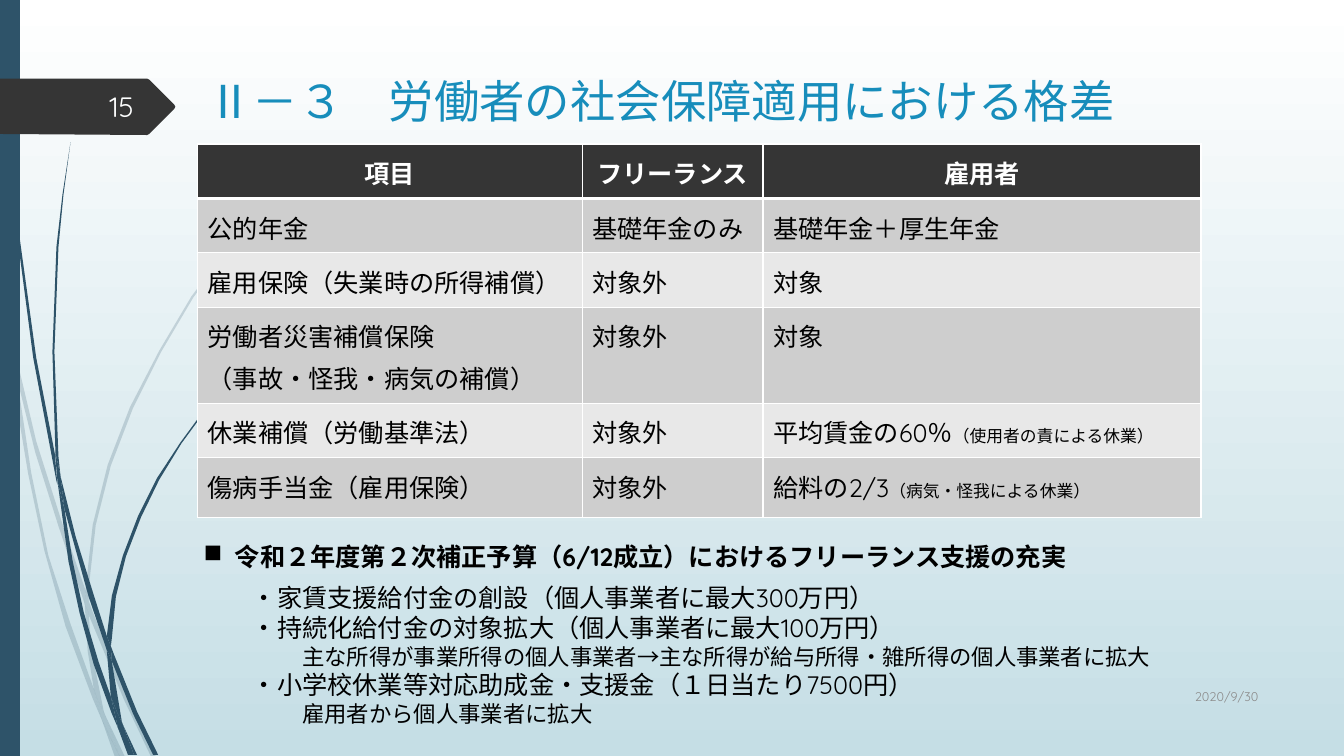
"""Build a slide comparing social security for freelancers and employees."""
from lxml import etree
from pptx import Presentation
from pptx.dml.color import RGBColor
from pptx.enum.text import MSO_ANCHOR, PP_ALIGN
from pptx.oxml.ns import qn
from pptx.util import Cm, Pt

LEFT, CENTER, RIGHT = PP_ALIGN.LEFT, PP_ALIGN.CENTER, PP_ALIGN.RIGHT
TOP, MIDDLE = MSO_ANCHOR.TOP, MSO_ANCHOR.MIDDLE
FONT = "Quicksand"
GRID = Cm(0.0254)
COLORS = {
    "white": "FFFFFF", "sky": "C5DEE5", "navy": "2E5369", "dark": "353535",
    "number": "FEFFFF", "title": "178DBB", "text": "000000", "date": "8C8C8C",
    "odd": "CECECE", "even": "E8E8E8",
}

PALE_BLADES = [
    [(11, 350), (9, 322), (0, 282), (0, 299), (10, 344)],
    [(58, 522), (84, 599), (85, 586), (62, 520), (36, 438), (14, 345), (17, 376), (35, 449)],
    [(92, 607), (88, 596), (88, 610), (123, 694), (150, 751), (155, 751), (127, 692)],
    [(119, 751), (124, 751), (105, 711)],
    [(93, 683), (70, 619), (48, 551), (31, 469), (17, 376), (11, 350), (18, 410), (28, 470),
     (44, 546), (65, 621), (92, 693), (101, 714), (99, 707)],
    [(84, 599), (87, 646), (93, 683), (96, 692), (105, 711), (103, 706), (91, 646), (88, 610),
     (88, 608)],
    [(88, 584), (95, 521), (110, 462), (132, 405), (160, 349), (192, 295), (229, 245),
     (268, 198), (290, 175), (312, 154), (312, 153), (289, 175), (268, 197), (228, 244),
     (190, 294), (158, 348), (129, 404), (107, 461), (92, 521), (85, 584), (85, 586), (88, 596)],
    [(101, 714), (114, 751), (119, 751)],
    [(88, 608), (88, 610), (88, 596), (85, 586), (84, 599)],
    [(96, 692), (93, 683), (99, 707), (101, 714), (119, 751), (105, 711)],
]
DARK_BLADES = [
    [(7, 110), (17, 233), (33, 355), (56, 477), (57, 481), (55, 457), (55, 453), (36, 355),
     (19, 232), (8, 109), (5, 48), (4, 0), (3, 0), (4, 48)],
    [(88, 592), (106, 645), (106, 631), (93, 590), (75, 532), (60, 472), (64, 505)],
    [(113, 649), (110, 641), (111, 656), (132, 708), (152, 749), (157, 749), (136, 706)],
    [(110, 691), (98, 657), (83, 607), (72, 556), (64, 505), (57, 477), (68, 557), (79, 608),
     (93, 659), (111, 708), (117, 722), (116, 717)],
    [(60, 472), (58, 453), (54, 349), (58, 245), (63, 193), (70, 141), (62, 193), (56, 245),
     (52, 349), (55, 449)],
    [(133, 749), (136, 749), (122, 719)],
    [(57, 477), (64, 505), (60, 472), (55, 449), (55, 453)],
    [(111, 633), (115, 592), (125, 552), (140, 513), (158, 476), (180, 440), (205, 406),
     (231, 374), (245, 359), (261, 344), (260, 344), (245, 358), (231, 373), (204, 405),
     (179, 439), (156, 474), (137, 512), (122, 551), (111, 591), (106, 631), (110, 641)],
    [(117, 722), (127, 749), (131, 749)],
    [(106, 645), (110, 691), (116, 706), (122, 719), (121, 716), (111, 656), (109, 651)],
    [(106, 645), (109, 651), (111, 656), (110, 641), (106, 631)],
    [(116, 706), (110, 691), (116, 717), (117, 722), (130, 749), (133, 749), (122, 719)],
]
PAGE_TAG = [(0, 78), (146, 78), (148, 79), (173, 104), (174, 106), (173, 108), (148, 133),
            (146, 134), (0, 133)]

TABLE_ROWS = [
    ["項目", "フリーランス", "雇用者"],
    ["公的年金", "基礎年金のみ", "基礎年金＋厚生年金"],
    ["雇用保険（失業時の所得補償）", "対象外", "対象"],
    ["労働者災害補償保険\n（事故・怪我・病気の補償）", "対象外", "対象"],
    ["休業補償（労働基準法）", "対象外", "平均賃金の60％|（使用者の責による休業）"],
    ["傷病手当金（雇用保険）", "対象外", "給料の2/3|（病気・怪我による休業）"],
]
COLUMN_WIDTHS = [9.69, 4.56, 11.04]
ROW_HEIGHTS = [1.37, 1.37, 1.37, 2.42, 1.37, 1.5]

SUPPORT_ITEMS = [
    (0, "・家賃支援給付金の創設（個人事業者に最大300万円）"),
    (0, "・持続化給付金の対象拡大（個人事業者に最大100万円）"),
    (1, "主な所得が事業所得の個人事業者→主な所得が給与所得・雑所得の個人事業者に拡大"),
    (0, "・小学校休業等対応助成金・支援金（１日当たり7500円）"),
    (1, "雇用者から個人事業者に拡大"),
]
LEVEL_SIZES = [18, 16]

TEXT_BOXES = [
    ((1.47, 2.18, 2.16, 1.02), MIDDLE, RIGHT, 20, "number", False, [(0, "15")]),
    ((4.98, 1.73, 26.9, 1.9), TOP, LEFT, 32.4, "title", False,
     [(0, "Ⅱ－３　労働者の社会保障適用における格差")]),
    ((4.88, 13.51, 25.1, 1.02), TOP, LEFT, 18, "text", True,
     [(0, "令和２年度第２次補正予算（6/12成立）におけるフリーランス支援の充実")]),
    ((6.1, 14.55, 24.16, 4.01), TOP, LEFT, None, "text", False, SUPPORT_ITEMS),
    ((28.78, 17.02, 3.18, 1.04), MIDDLE, RIGHT, 9, "date", False, [(0, "2020/9/30")]),
]


def add_outline(shapes, points, color, alpha=None):
    """Draw a closed, filled outline from points on the fine grid."""
    builder = shapes.build_freeform(*points[0], scale=GRID)
    builder.add_line_segments(points[1:], close=True)
    shape = builder.convert_to_shape()
    shape.shadow.inherit = False
    shape.line.fill.background()
    shape.fill.solid()
    shape.fill.fore_color.rgb = RGBColor.from_string(COLORS[color])
    if alpha:
        tint = shape.fill._xPr.find(".//" + qn("a:srgbClr"))
        etree.SubElement(tint, qn("a:alpha"), val=str(alpha * 1000))


def add_span(para, text, size, color, bold=False):
    """Append formatted text to a paragraph."""
    span = para.add_run()
    span.text = text
    for name, value in {"name": FONT, "size": Pt(size), "bold": bold}.items():
        setattr(span.font, name, value)
    span.font.color.rgb = RGBColor.from_string(COLORS[color])


deck = Presentation()
deck.slide_width, deck.slide_height = Cm(33.87), Cm(19.05)
page = deck.slides.add_slide(deck.slide_layouts[6])

backdrop = page.background.fill
backdrop.gradient()
backdrop.gradient_angle = 270
for stop, color, position in zip(backdrop.gradient_stops, ["white", "sky"], [0, 1]):
    stop.color.rgb = RGBColor.from_string(COLORS[color])
    stop.position = position

for blades, alpha in [(PALE_BLADES, 20), (DARK_BLADES, None)]:
    group = page.shapes.add_group_shape()
    for blade in blades:
        add_outline(group.shapes, blade, "navy", alpha)

add_outline(page.shapes, [(0, 0), (20, 0), (20, 750), (0, 750)], "navy")
add_outline(page.shapes, PAGE_TAG, "dark")

frame = page.shapes.add_table(6, 3, Cm(4.98), Cm(3.63), Cm(25.29), Cm(9.4))
table = frame.table
for column, width in zip(table.columns, COLUMN_WIDTHS):
    column.width = Cm(width)
for row, height in zip(table.rows, ROW_HEIGHTS):
    row.height = Cm(height)
for row_index, texts in enumerate(TABLE_ROWS):
    header = row_index == 0
    shade = "dark" if header else ("even", "odd")[row_index % 2]
    for column_index, text in enumerate(texts):
        cell = table.cell(row_index, column_index)
        properties = cell._tc.get_or_add_tcPr()
        for side in ["lnL", "lnR", "lnT", "lnB"]:
            heavy = (row_index, side) in [(0, "lnB"), (1, "lnT")]
            border = etree.SubElement(properties, qn("a:" + side), w=str(Pt(3 if heavy else 1)))
            paint = etree.SubElement(border, qn("a:solidFill"))
            etree.SubElement(paint, qn("a:srgbClr"), val=COLORS["white"])
        cell.fill.solid()
        cell.fill.fore_color.rgb = RGBColor.from_string(COLORS[shade])
        for line_index, line in enumerate(text.split("\n")):
            para = cell.text_frame.add_paragraph() if line_index else cell.text_frame.paragraphs[0]
            para.alignment = CENTER if header else LEFT
            para.line_spacing = 1.15
            for part, size in zip(line.split("|"), [18, 12]):
                add_span(para, part, size, "white" if header else "text", header)

for place, anchor, alignment, size, color, bold, lines in TEXT_BOXES:
    box = page.shapes.add_textbox(*[Cm(length) for length in place])
    box.text_frame.word_wrap = True
    box.text_frame.vertical_anchor = anchor
    for line_index, (level, text) in enumerate(lines):
        para = box.text_frame.add_paragraph() if line_index else box.text_frame.paragraphs[0]
        para.alignment, para.level = alignment, level
        add_span(para, text, size or LEVEL_SIZES[level], color, bold)
        if bold:
            settings = para._p.get_or_add_pPr()
            settings.set("marL", str(Cm(0.79)))
            settings.set("indent", str(Cm(-0.79)))
            etree.SubElement(settings, qn("a:buChar"), char="■")

deck.save("out.pptx")
